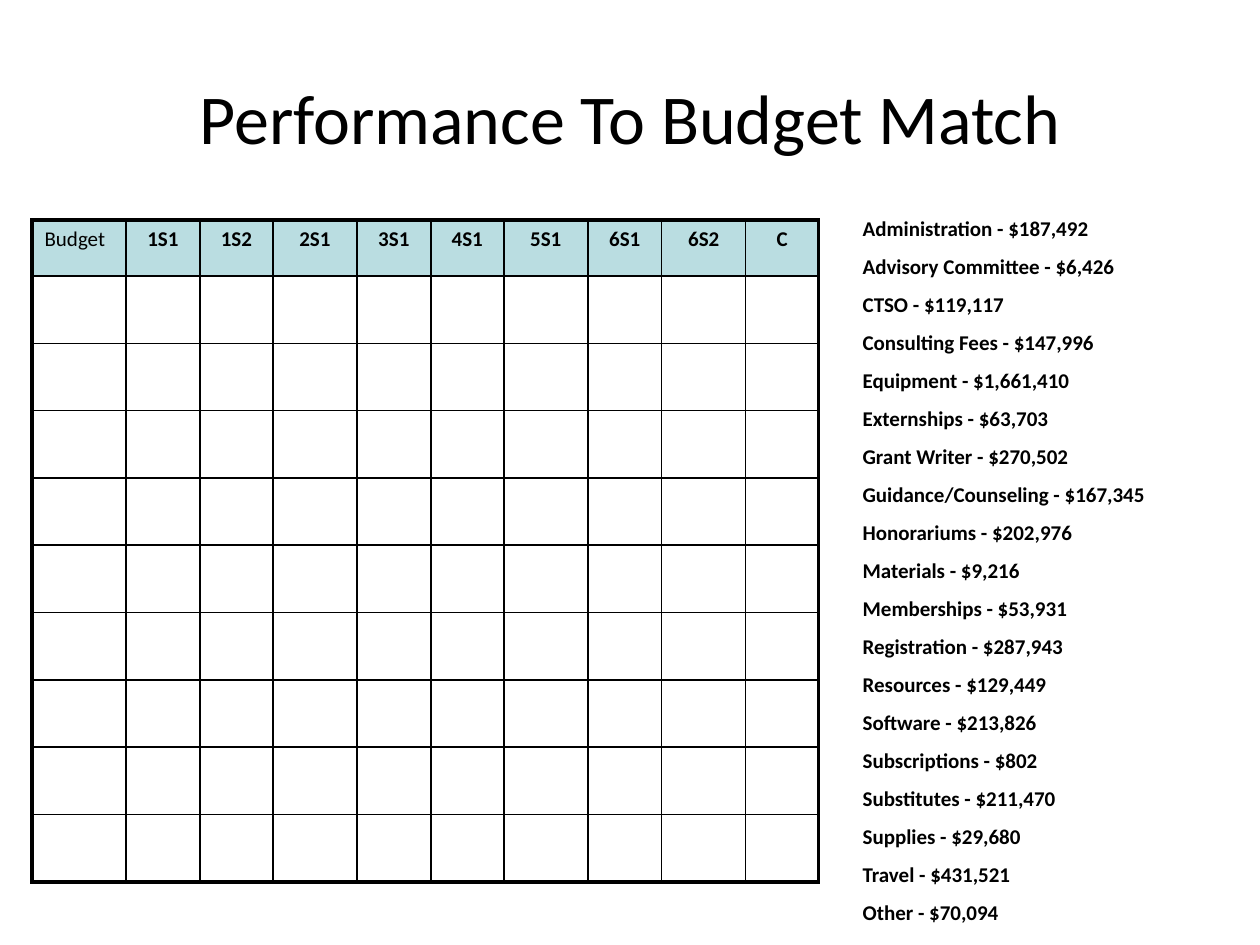
import lxml.etree
import pptx
import pptx.dml.color
import pptx.enum.text
import pptx.oxml.ns
import pptx.util

EMU_PER_PX = 914400 / 126
FONT = "Calibri"
COLORS = {"text": "000000", "border": "000000", "header": "BADDE1"}
LEFT = pptx.enum.text.PP_ALIGN.LEFT
CENTER = pptx.enum.text.PP_ALIGN.CENTER


def px(length):
    return pptx.util.Emu(round(length * EMU_PER_PX))


def add_text(paragraph, text, size, bold, alignment):
    paragraph.alignment = alignment
    run = paragraph.add_run()
    run.text = text
    run.font.name = FONT
    run.font.size = pptx.util.Pt(size)
    run.font.bold = bold
    run.font.color.rgb = pptx.dml.color.RGBColor.from_string(COLORS["text"])


presentation = pptx.Presentation()
presentation.slide_width = px(1260)
presentation.slide_height = px(945)
slide = presentation.slides.add_slide(presentation.slide_layouts[6])

# Title
title = slide.shapes.add_textbox(px(63), px(38), px(1134), px(157))
title.text_frame.word_wrap = True
title.text_frame.vertical_anchor = pptx.enum.text.MSO_ANCHOR.MIDDLE
add_text(title.text_frame.paragraphs[0], "Performance To Budget Match", 40, False, CENTER)

# Empty matching grid: header row plus nine equal rows
headers = ["Budget", "1S1", "1S2", "2S1", "3S1", "4S1", "5S1", "6S1", "6S2", "C"]
column_widths = [94, 74, 73, 84, 74, 73, 84, 74, 84, 73]
header_height, body_height, body_rows = 56, 606, 9
row_count, column_count = body_rows + 1, len(headers)
grid = slide.shapes.add_table(
    row_count, column_count, px(32), px(220),
    px(sum(column_widths)), px(header_height + body_height)).table
grid.first_row = False
grid.horz_banding = False
for column, width in zip(grid.columns, column_widths):
    column.width = px(width)
for index, row in enumerate(grid.rows):
    row.height = px(header_height if index == 0 else body_height / body_rows)

for row_index in range(row_count):
    for column_index, header in enumerate(headers):
        cell = grid.cell(row_index, column_index)

        # Thick lines around the grid, thin lines inside
        on_outside = {
            "a:lnL": column_index == 0,
            "a:lnR": column_index == column_count - 1,
            "a:lnT": row_index == 0,
            "a:lnB": row_index == row_count - 1,
        }
        properties = cell._tc.get_or_add_tcPr()
        for tag, outside in on_outside.items():
            line = lxml.etree.SubElement(properties, pptx.oxml.ns.qn(tag))
            line.set("w", str(pptx.util.Pt(2.25 if outside else 1)))
            fill = lxml.etree.SubElement(line, pptx.oxml.ns.qn("a:solidFill"))
            color = lxml.etree.SubElement(fill, pptx.oxml.ns.qn("a:srgbClr"))
            color.set("val", COLORS["border"])

        if row_index == 0:
            cell.fill.solid()
            cell.fill.fore_color.rgb = pptx.dml.color.RGBColor.from_string(COLORS["header"])
            is_label = column_index == 0
            add_text(cell.text_frame.paragraphs[0], header, 12,
                     not is_label, LEFT if is_label else CENTER)
        else:
            cell.fill.background()

# Budget list
budget_items = [
    ("Administration", "187,492"),
    ("Advisory Committee", "6,426"),
    ("CTSO", "119,117"),
    ("Consulting Fees", "147,996"),
    ("Equipment", "1,661,410"),
    ("Externships", "63,703"),
    ("Grant Writer", "270,502"),
    ("Guidance/Counseling", "167,345"),
    ("Honorariums", "202,976"),
    ("Materials", "9,216"),
    ("Memberships", "53,931"),
    ("Registration", "287,943"),
    ("Resources", "129,449"),
    ("Software", "213,826"),
    ("Subscriptions", "802"),
    ("Substitutes", "211,470"),
    ("Supplies", "29,680"),
    ("Travel", "431,521"),
    ("Other", "70,094"),
]
item_height = 38
budget_list = slide.shapes.add_table(
    len(budget_items), 1, px(850), px(210),
    px(410), px(item_height * len(budget_items))).table
budget_list.first_row = False
budget_list.horz_banding = False
for index, (name, amount) in enumerate(budget_items):
    budget_list.rows[index].height = px(item_height)
    cell = budget_list.cell(index, 0)
    cell.fill.background()
    cell.vertical_anchor = pptx.enum.text.MSO_ANCHOR.BOTTOM
    paragraph = cell.text_frame.paragraphs[0]
    add_text(paragraph, f"{name} - ${amount}", 12, True, LEFT)
    # Hanging indent
    paragraph_properties = paragraph._p.get_or_add_pPr()
    paragraph_properties.set("marL", str(px(48)))
    paragraph_properties.set("indent", str(px(-48)))

presentation.save("out.pptx")
